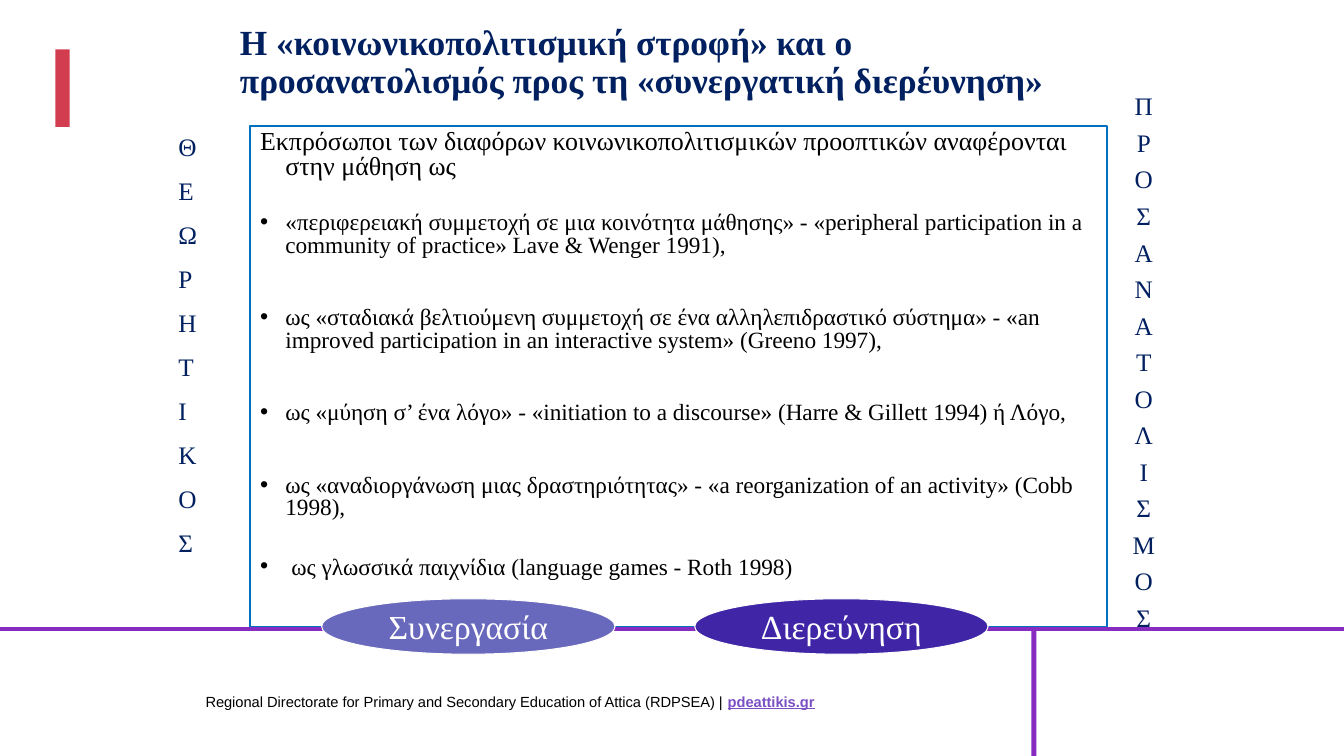
from lxml import etree
from pptx import Presentation
from pptx.dml.color import RGBColor
from pptx.enum import shapes, text
from pptx.oxml.ns import qn
from pptx.util import Inches, Pt

COLORS = {
    "black": "000000", "white": "FFFFFF", "navy": "002060", "link": "7A4FC4",
    "purple": "882BC1", "red": "D33D50", "frame": "0070C0",
    "lavender": "6868BD", "indigo": "4026A6",
}
SERIF = "Times New Roman"

TITLE = "Η «κοινωνικοπολιτισμική στροφή» και ο προσανατολισμός προς τη «συνεργατική διερέυνηση»"
INTRO = "Εκπρόσωποι των διαφόρων κοινωνικοπολιτισμικών προοπτικών αναφέρονται στην μάθηση ως"
# text, space before in points, hanging indent in inches
VIEWS = [
    ("«περιφερειακή συμμετοχή σε μια κοινότητα μάθησης» - «peripheral participation "
     "in a community of practice» Lave & Wenger 1991),", 23, 0.25),
    ("ως «σταδιακά βελτιούμενη συμμετοχή σε ένα αλληλεπιδραστικό σύστημα» - «an improved "
     "participation in an interactive system» (Greeno 1997),", 36, 0.25),
    ("ως «μύηση σ’ ένα λόγο» - «initiation to a discourse» (Harre & Gillett 1994) ή Λόγο,", 36, 0.25),
    ("ως «αναδιοργάνωση μιας δραστηριότητας» - «a reorganization of an activity» (Cobb 1998),", 36, 0.25),
    ("ως γλωσσικά παιχνίδια (language games - Roth 1998)", 26.5, 0.31),
]
# word, box, space between letters, alignment
SIDE_WORDS = [
    ("ΘΕΩΡΗΤΙΚΟΣ", (1.67, 1.25, 0.57, 5.4), 9.9, text.PP_ALIGN.LEFT),
    ("ΠΡΟΣΑΝΑΤΟΛΙΣΜΟΣ", (11.06, 0.85, 0.57, 5.49), 4.5, text.PP_ALIGN.CENTER),
]
KEYWORDS = [("Συνεργασία", "lavender"), ("Διερεύνηση", "indigo")]
KEYWORD_LEFT, KEYWORD_STEP = 3.19, 3.7
FOOTER = "Regional Directorate for Primary and Secondary Education of Attica (RDPSEA) | "
SITE = "pdeattikis.gr"
BARS = [((10.23, 6.24, 0.05, 1.26), "purple"), ((0.55, 0.49, 0.14, 0.77), "red")]


def rgb(name):
    return RGBColor.from_string(COLORS[name])


def place(shape, box):
    for side, length in zip(("left", "top", "width", "height"), box):
        setattr(shape, side, Inches(length))


def write(paragraph, words, size, color, face=SERIF, **formats):
    run = paragraph.add_run()
    run.text = words
    run.font.color.rgb = rgb(color)
    for key, value in {"size": Pt(size), "name": face, **formats}.items():
        setattr(run.font, key, value)


def next_paragraph(frame, index):
    return frame.add_paragraph() if index else frame.paragraphs[0]


def hang(paragraph, indent, bullet=None):
    """Set a hanging indent, with or without a bullet."""
    props = paragraph._p.get_or_add_pPr()
    props.set("marL", str(Inches(indent)))
    props.set("indent", str(-Inches(indent)))
    if bullet:
        font = etree.SubElement(props, qn("a:buFont"))
        font.set("typeface", "Arial")
        etree.SubElement(props, qn("a:buChar")).set("char", bullet)
    else:
        etree.SubElement(props, qn("a:buNone"))


def add_filled(slide, kind, box, color):
    shape = slide.shapes.add_shape(kind, *map(Inches, box))
    shape.shadow.inherit = False
    shape.fill.solid()
    shape.fill.fore_color.rgb = rgb(color)
    shape.line.fill.background()
    return shape


def add_decor(slide):
    footer = slide.shapes.add_textbox(*map(Inches, (1.94, 6.82, 6.4, 0.28)))
    footer.text_frame.word_wrap = False
    credit = footer.text_frame.paragraphs[0]
    write(credit, FOOTER, 10.5, "black", "Arial")
    write(credit, SITE, 10.5, "link", "Arial", bold=True, underline=True)

    rule = slide.shapes.add_connector(
        shapes.MSO_CONNECTOR.STRAIGHT, *map(Inches, (0, 6.24, 13.33, 6.24)))
    rule.line.color.rgb = rgb("purple")
    rule.line.width = Pt(3)
    etree.SubElement(rule._element.spPr, qn("a:effectLst"))
    for box, color in BARS:
        add_filled(slide, shapes.MSO_SHAPE.RECTANGLE, box, color)


def fill_title(title):
    place(title, (2.28, 0, 8.98, 1.25))
    frame = title.text_frame
    frame.auto_size = text.MSO_AUTO_SIZE.NONE
    frame.vertical_anchor = text.MSO_ANCHOR.MIDDLE
    heading = frame.paragraphs[0]
    heading.alignment = text.PP_ALIGN.LEFT
    heading.line_spacing = 0.9
    write(heading, TITLE, 25.2, "navy", bold=True)


def fill_body(body):
    place(body, (2.48, 1.25, 8.5, 4.97))
    body.line.color.rgb = rgb("frame")
    body.line.width = Pt(2)
    frame = body.text_frame
    frame.auto_size = text.MSO_AUTO_SIZE.NONE
    for i, (words, gap, indent) in enumerate([(INTRO, 0, 0.25)] + VIEWS):
        view = next_paragraph(frame, i)
        hang(view, indent, "•" if i else None)
        view.line_spacing = 0.8
        view.space_before = Pt(gap)
        write(view, words, 16.6 if i else 18.5, "black")


def add_side_word(slide, word, box, gap, alignment):
    frame = slide.shapes.add_textbox(*map(Inches, box)).text_frame
    frame.word_wrap = True
    for i, character in enumerate(word):
        letter = next_paragraph(frame, i)
        letter.alignment = alignment
        letter.space_before = Pt(gap if i else 0)
        write(letter, character, 18, "navy")


def add_keyword(slide, index, word, color):
    box = (KEYWORD_LEFT + index * KEYWORD_STEP, 5.94, 2.91, 0.55)
    oval = add_filled(slide, shapes.MSO_SHAPE.OVAL, box, color)
    oval.line.color.rgb = rgb("white")
    oval.line.width = Pt(0.75)
    frame = oval.text_frame
    frame.word_wrap = False
    frame.vertical_anchor = text.MSO_ANCHOR.MIDDLE
    frame.paragraphs[0].alignment = text.PP_ALIGN.CENTER
    write(frame.paragraphs[0], word, 24, "white")


def main():
    deck = Presentation()
    deck.slide_width, deck.slide_height = Inches(13.33), Inches(7.5)
    slide = deck.slides.add_slide(deck.slide_layouts[1])
    add_decor(slide)
    fill_title(slide.shapes.title)
    fill_body(slide.placeholders[1])
    for side_word in SIDE_WORDS:
        add_side_word(slide, *side_word)
    for i, (word, color) in enumerate(KEYWORDS):
        add_keyword(slide, i, word, color)
    deck.save("out.pptx")


if __name__ == "__main__":
    main()
